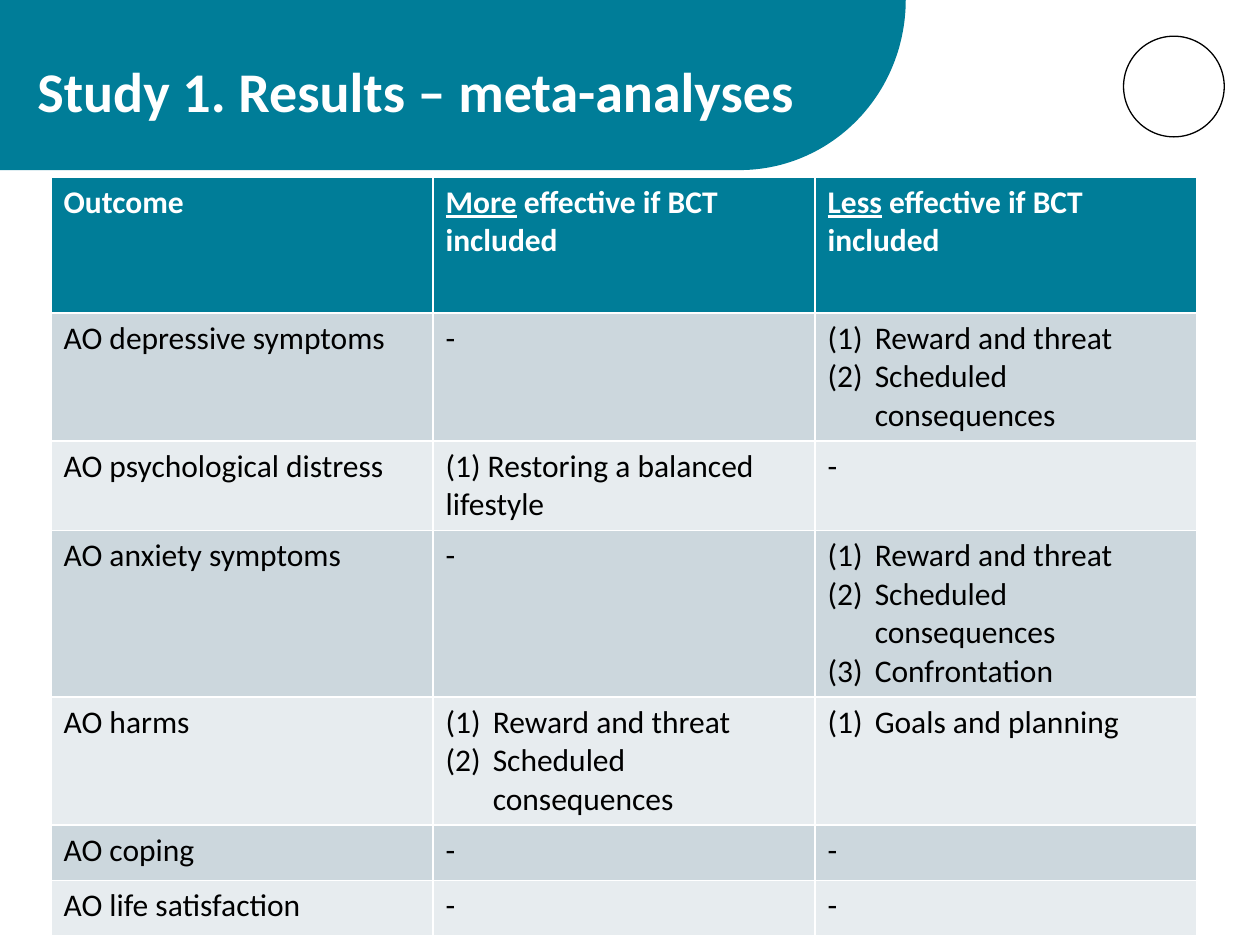
from math import cos, pi, sin

from lxml.etree import SubElement
from pptx import Presentation
from pptx.dml.color import RGBColor
from pptx.enum.shapes import MSO_SHAPE
from pptx.enum.text import MSO_ANCHOR, MSO_AUTO_SIZE, PP_ALIGN
from pptx.oxml.ns import qn
from pptx.util import Cm, Pt

TITLE = "Study 1. Results – meta-analyses"
HEADERS = [
    [("Outcome", False)],
    [("More", True), (" effective if BCT included", False)],
    [("Less", True), (" effective if BCT included", False)],
]
REWARD = "Reward and threat"
SCHEDULED = "Scheduled consequences"
ROWS = [
    ("AO depressive symptoms", "-", [REWARD, SCHEDULED]),
    ("AO psychological distress", "(1) Restoring a balanced lifestyle", "-"),
    ("AO anxiety symptoms", "-", [REWARD, SCHEDULED, "Confrontation"]),
    ("AO harms", [REWARD, SCHEDULED], ["Goals and planning"]),
    ("AO coping", "-", "-"),
    ("AO life satisfaction", "-", "-"),
]
COLORS = {
    "teal": "007D98",
    "dark band": "CCD7DD",
    "light band": "E7ECEF",
    "white": "FFFFFF",
    "black": "000000",
}
TITLE_FORMAT = {"name": "Calibri", "size": Pt(32), "bold": True}
HEADER_FORMAT = {"name": "Calibri", "size": Pt(18), "bold": True}
BODY_FORMAT = {"name": "Calibri", "size": Pt(18), "bold": False}

BANNER_WIDTH, BANNER_HEIGHT, CURVE_WIDTH = 18.26, 3.43, 3.35
CURVE_STEPS = 60
HEADER_HEIGHT, ROW_HEIGHT = 2.74, 1.12


def color(name):
    return RGBColor.from_string(COLORS[name])


def format_font(font, values, color_name):
    for key, value in values.items():
        setattr(font, key, value)
    font.color.rgb = color(color_name)


def add_banner(page):
    center = BANNER_WIDTH - CURVE_WIDTH
    angles = [pi / 2 * step / CURVE_STEPS for step in range(CURVE_STEPS + 1)]
    curve = [
        (Cm(center + CURVE_WIDTH * cos(angle)), Cm(BANNER_HEIGHT * sin(angle)))
        for angle in angles
    ]
    builder = page.shapes.build_freeform(0, 0)
    builder.add_line_segments(curve + [(0, Cm(BANNER_HEIGHT))])
    banner = builder.convert_to_shape()
    banner.shadow.inherit = False
    banner.fill.solid()
    banner.fill.fore_color.rgb = color("teal")
    banner.line.fill.background()


def add_ring(page):
    ring = page.shapes.add_shape(MSO_SHAPE.OVAL, Cm(22.65), Cm(0.73), Cm(2.03), Cm(2.03))
    ring.shadow.inherit = False
    ring.fill.background()
    ring.line.color.rgb = color("black")
    ring.line.width = Pt(0.75)


def place_title(page):
    title = page.shapes.title
    page.shapes.element.append(title.element)
    bounds = {"left": Cm(0.5), "top": Cm(1.17), "width": Cm(17.76), "height": Cm(2.26)}
    for key, value in bounds.items():
        setattr(title, key, value)
    frame = title.text_frame
    frame.text = TITLE
    frame.word_wrap = True
    frame.auto_size = MSO_AUTO_SIZE.NONE
    frame.vertical_anchor = MSO_ANCHOR.TOP
    para = frame.paragraphs[0]
    para.alignment = PP_ALIGN.LEFT
    para.line_spacing = 0.9
    format_font(para.runs[0].font, TITLE_FORMAT, "white")


def number_paragraph(para):
    properties = para._p.get_or_add_pPr()
    properties.set("marL", str(Cm(0.95)))
    properties.set("indent", str(-Cm(0.95)))
    SubElement(properties, qn("a:buFont"), typeface="+mj-lt")
    SubElement(properties, qn("a:buAutoNum"), type="arabicParenBoth")


def fill_cell(cell, fill_name, paragraphs, values, color_name, numbered=False):
    cell.fill.solid()
    cell.fill.fore_color.rgb = color(fill_name)
    frame = cell.text_frame
    for index, spans in enumerate(paragraphs):
        para = frame.add_paragraph() if index else frame.paragraphs[0]
        if numbered:
            number_paragraph(para)
        for text, underlined in spans:
            span = para.add_run()
            span.text = text
            format_font(span.font, values, color_name)
            if underlined:
                span.font.underline = True


def add_results(page):
    height = HEADER_HEIGHT + ROW_HEIGHT * len(ROWS)
    table = page.shapes.add_table(
        len(ROWS) + 1, len(HEADERS), Cm(1.03), Cm(3.57), Cm(23.1), Cm(height)
    ).table
    for row in table.rows:
        row.height = Cm(ROW_HEIGHT)
    table.rows[0].height = Cm(HEADER_HEIGHT)
    for column, spans in enumerate(HEADERS):
        fill_cell(table.cell(0, column), "teal", [spans], HEADER_FORMAT, "white")
    for row, entries in enumerate(ROWS, 1):
        band = "dark band" if row % 2 else "light band"
        for column, entry in enumerate(entries):
            numbered = isinstance(entry, list)
            lines = entry if numbered else [entry]
            paragraphs = [[(line, False)] for line in lines]
            fill_cell(table.cell(row, column), band, paragraphs, BODY_FORMAT, "black", numbered)


def main():
    deck = Presentation()
    deck.slide_width, deck.slide_height = Cm(25.4), Cm(19.05)
    page = deck.slides.add_slide(deck.slide_layouts[5])
    add_banner(page)
    add_ring(page)
    place_title(page)
    add_results(page)
    deck.save("out.pptx")


if __name__ == "__main__":
    main()
